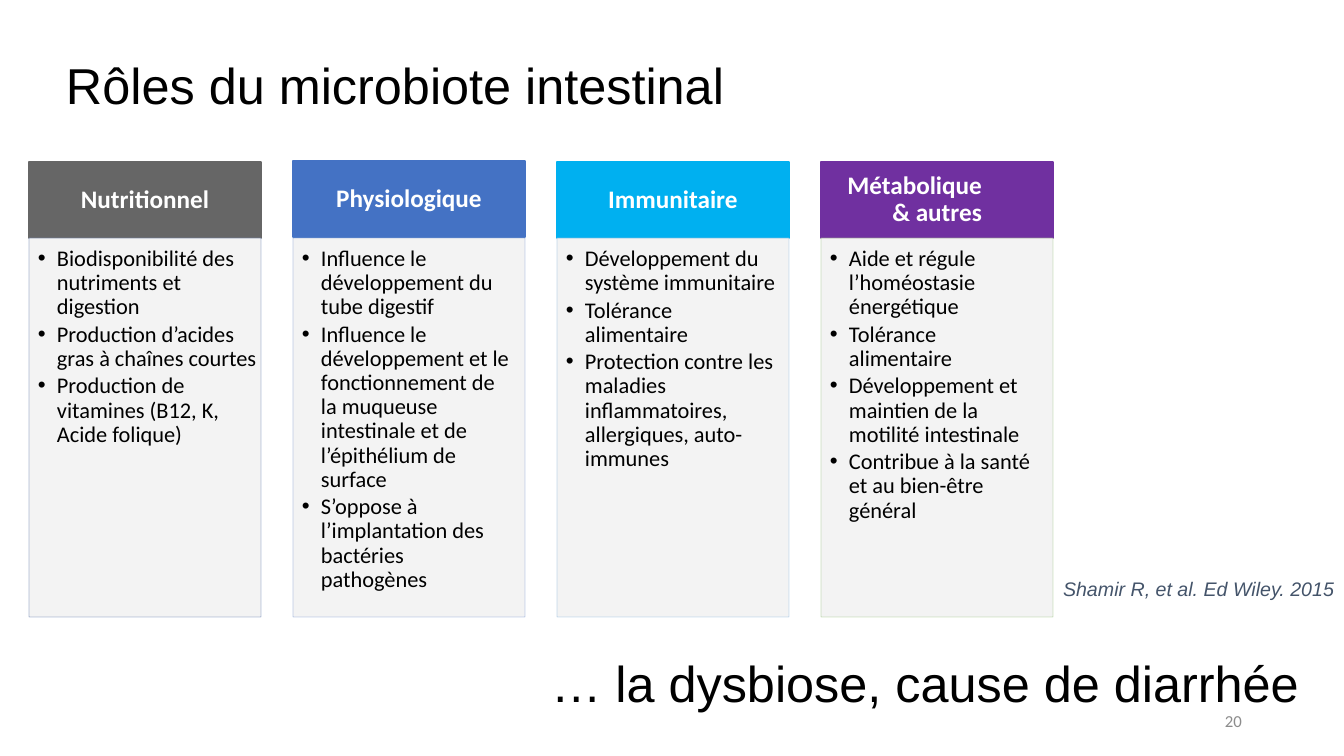
from lxml import etree
from pptx import Presentation
from pptx.dml.color import RGBColor
from pptx.enum.shapes import MSO_SHAPE
from pptx.enum.text import MSO_ANCHOR, PP_ALIGN
from pptx.oxml.ns import qn
from pptx.util import Pt

PX = 9071
RECT = MSO_SHAPE.RECTANGLE
TOP, MID = MSO_ANCHOR.TOP, MSO_ANCHOR.MIDDLE
LEFT, MID_X, RIGHT = PP_ALIGN.LEFT, PP_ALIGN.CENTER, PP_ALIGN.RIGHT
hue = RGBColor.from_string


def write(shape, text, size, color="000000", font="Arial", bold=False, ital=False,
          align=LEFT, anchor=TOP, pad=(10, 5, 10, 5), wrap=True, lead=1.0, after=0, dots=False):
    frame = shape.text_frame
    frame.word_wrap = wrap
    frame.vertical_anchor = anchor
    frame.margin_left, frame.margin_top, frame.margin_right, frame.margin_bottom = [n * PX for n in pad]
    frame.text = text
    for para in frame.paragraphs:
        if dots:
            props = para._p.get_or_add_pPr()
            props.set("marL", str(19 * PX))
            props.set("indent", str(-19 * PX))
            etree.SubElement(props, qn("a:buFont"), typeface="Arial")
            etree.SubElement(props, qn("a:buChar"), char="•")
        para.alignment = align
        para.line_spacing = lead
        para.space_after = Pt(after)
        for run in para.runs:
            run.font.size = Pt(size)
            run.font.name = font
            run.font.bold = bold
            run.font.italic = ital
            run.font.color.rgb = hue(color)


def block(x, y, w, h, fill, line, width):
    shape = slide.shapes.add_shape(RECT, x * PX, y * PX, w * PX, h * PX)
    shape.shadow.inherit = False
    shape.fill.solid()
    shape.fill.fore_color.rgb = hue(fill)
    shape.line.color.rgb = hue(line)
    shape.line.width = Pt(width)
    return shape


deck = Presentation()
deck.slide_width, deck.slide_height = 1344 * PX, 756 * PX
slide = deck.slides.add_slide(deck.slide_layouts[5])

title = slide.shapes.title
title.left, title.top, title.width, title.height = 56 * PX, 37 * PX, 694 * PX, 103 * PX
write(title, "Rôles du microbiote intestinal", 36, anchor=MID, lead=0.9)

roles = [
    ("Nutritionnel", "666666", "153B88", 162, 0, [
        "Biodisponibilité des nutriments et digestion",
        "Production d’acides gras à chaînes courtes",
        "Production de vitamines (B12, K, Acide folique)"]),
    ("Physiologique", "4472C4", "4472C4", 161, 12, [
        "Influence le développement du tube digestif",
        "Influence le développement et le fonctionnement de la muqueuse intestinale "
        "et de l’épithélium de surface",
        "S’oppose à l’implantation des bactéries pathogènes"]),
    ("Immunitaire", "00B0F0", "5B9BD5", 162, 12, [
        "Développement du système immunitaire",
        "Tolérance alimentaire",
        "Protection contre les maladies inflammatoires, allergiques, auto-immunes"]),
    ("Métabolique\v& autres", "7030A0", "70AD47", 162, 12, [
        "Aide et régule l’homéostasie énergétique",
        "Tolérance alimentaire",
        "Développement et maintien de la motilité intestinale",
        "Contribue à la santé et au bien-être général"]),
]
for i, (name, tint, edge, top, gap, items) in enumerate(roles):
    x = 29 + 264 * i
    split = "\v" in name
    head = block(x, top, 232, 76, tint, tint, 1)
    write(head, name, 18, "FFFFFF", "Calibri", bold=True, anchor=MID, lead=0.9,
          align=RIGHT if split else MID_X, pad=(14, 8, 71 if split else 14, 8))
    body = block(x, 238, 232, 379, "F2F2F2", edge, 0.25)
    for color in body._element.spPr.iter(qn("a:srgbClr")):
        etree.SubElement(color, qn("a:alpha"), val="90000")
    write(body, "\n".join(items), 16, font="Calibri", pad=(9, 9, gap, 14),
          lead=0.9, after=2.4, dots=True)

notes = [
    ((1053, 572, 293, 34), "Shamir R, et al. Ed Wiley. 2015",
     dict(size=14, color="44546A", ital=True, wrap=False)),
    ((541, 647, 910, 72), "… la dysbiose, cause de diarrhée", dict(size=36)),
    ((950, 701, 302, 40), "20",
     dict(size=12, color="8C8C8C", font="Calibri", align=RIGHT, anchor=MID)),
]
for spot, text, style in notes:
    write(slide.shapes.add_textbox(*[n * PX for n in spot]), text, **style)

deck.save("out.pptx")
